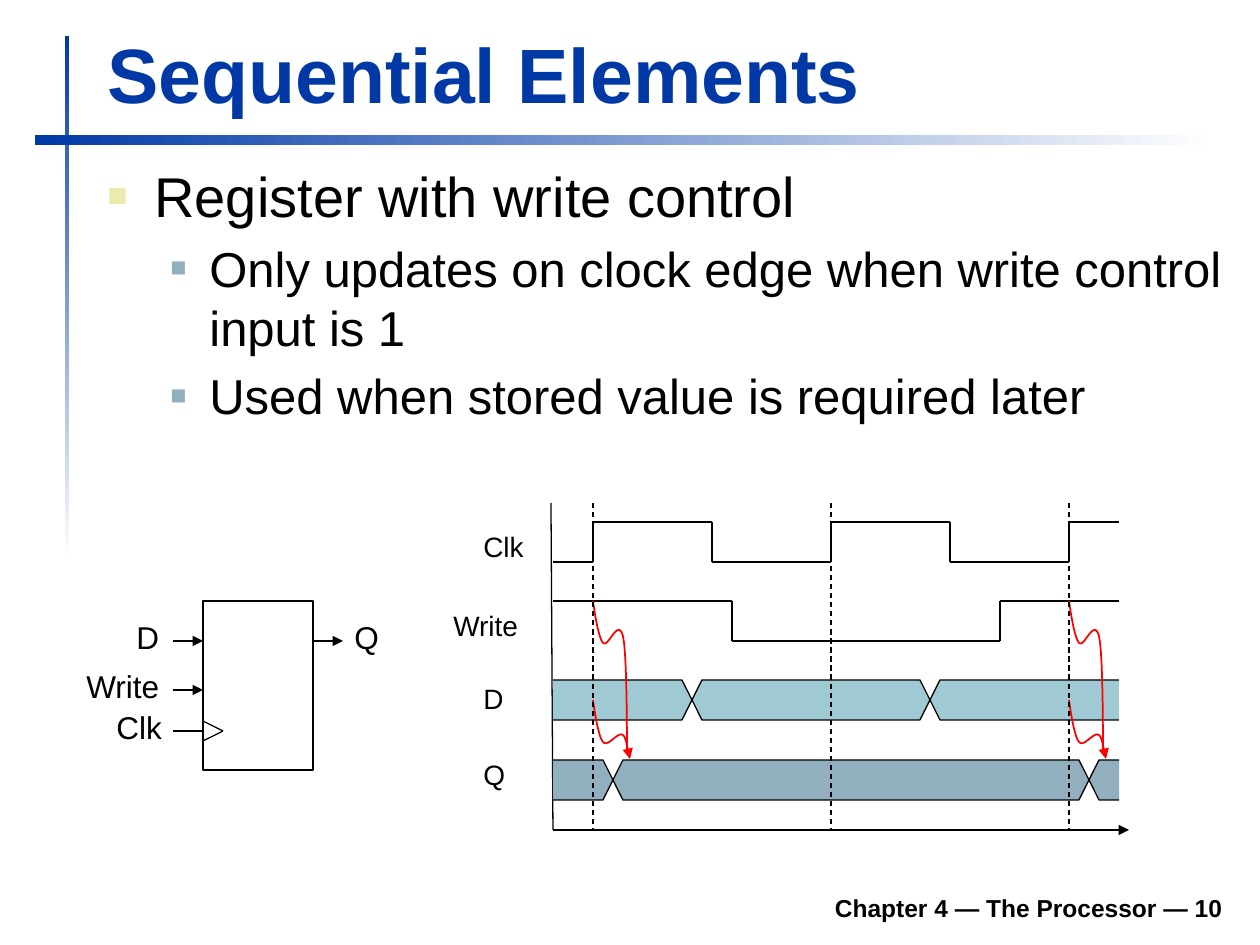
from itertools import pairwise

from lxml import etree
from pptx import Presentation
from pptx import util as u
from pptx.dml.color import RGBColor
from pptx.enum import dml, shapes, text
from pptx.oxml.ns import qn

PX = u.Inches(1) / 126
COLORS = {
    "blue": "0039A6", "white": "FFFFFF", "black": "000000", "red": "FF0000",
    "cream": "ECEAAC", "steel": "91AFBF", "aqua": "9FCAD3",
}
FONT = "Arial"


def px(value):
    return u.Emu(round(value * PX))


def rgb(name):
    return RGBColor.from_string(COLORS[name])


def style_line(item, color, width, arrow=False):
    item.line.color.rgb = rgb(color)
    item.line.width = u.Pt(width)
    if arrow:
        etree.SubElement(item.line._get_or_add_ln(), qn("a:tailEnd"), type="triangle")


def style_paragraph(paragraph, size, color="black", bold=False):
    for run in paragraph.runs:
        run.font.name = FONT
        run.font.size = u.Pt(size)
        run.font.bold = bold
        run.font.color.rgb = rgb(color)


def add_text(slide, box, words, size, color="black", bold=False, wrap=True):
    frame = slide.shapes.add_textbox(*map(px, box)).text_frame
    frame.word_wrap = wrap
    frame.text = words
    for paragraph in frame.paragraphs:
        style_paragraph(paragraph, size, color, bold)
    return frame


def add_label(slide, left, top, width, words, size):
    frame = add_text(slide, (left, top, width, 50 if size == 18 else 47),
                     words, size, wrap=False)
    frame.auto_size = text.MSO_AUTO_SIZE.SHAPE_TO_FIT_TEXT


def add_bullet(paragraph, size, color, percent, margin, indent):
    paragraph.space_before = u.Pt(size * 0.2)
    style_paragraph(paragraph, size)
    props = paragraph._p.get_or_add_pPr()
    props.set("marL", str(px(margin)))
    props.set("indent", str(px(-indent)))
    bullet_color = etree.SubElement(props, qn("a:buClr"))
    etree.SubElement(bullet_color, qn("a:srgbClr"), val=COLORS[color])
    etree.SubElement(props, qn("a:buSzPct"), val=str(percent * 1000))
    etree.SubElement(props, qn("a:buFont"), typeface=FONT)
    etree.SubElement(props, qn("a:buChar"), char="■")


def add_fade(slide, box, angle):
    bar = slide.shapes.add_shape(shapes.MSO_SHAPE.RECTANGLE, *map(px, box))
    bar.shadow.inherit = False
    bar.line.fill.background()
    bar.fill.gradient()
    bar.fill.gradient_angle = angle
    for stop, color in zip(bar.fill.gradient_stops, ("blue", "white")):
        stop.color.rgb = rgb(color)


def add_line(slide, start, end, width=0.75, arrow=False, dashed=False):
    line = slide.shapes.add_connector(shapes.MSO_CONNECTOR.STRAIGHT,
                                      *map(px, (*start, *end)))
    style_line(line, "black", width)
    if dashed:
        line.line.dash_style = dml.MSO_LINE.DASH
    if arrow:
        etree.SubElement(line.line._get_or_add_ln(), qn("a:tailEnd"), type="triangle")
    etree.SubElement(line._element.spPr, qn("a:effectLst"))


def add_outline(slide, points, fill=None, color="black", width=0.75,
                close=False, arrow=False):
    start, *rest = [(px(x), px(y)) for x, y in points]
    builder = slide.shapes.build_freeform(*start, scale=1.0)
    builder.add_line_segments(rest, close=close)
    outline = builder.convert_to_shape()
    outline.shadow.inherit = False
    if fill:
        outline.fill.solid()
        outline.fill.fore_color.rgb = rgb(fill)
    else:
        outline.fill.background()
    style_line(outline, color, width, arrow)


def add_signal(slide, points):
    for start, end in pairwise(points):
        add_line(slide, start, end, 1.5)


def add_bus(slide, left, right, top, changes, fill):
    """A data band whose values cross over at each change."""
    slant, middle, bottom = 10, top + 20, top + 40
    first, last = changes
    for edge, tip, side in ((left, first, -1), (right, last, 1)):
        neck = tip + side * slant
        add_outline(slide, [(edge, top), (neck, top), (tip, middle),
                            (neck, bottom), (edge, bottom)], fill)
    add_outline(slide, [(first, middle), (first + slant, top), (last - slant, top),
                        (last, middle), (last - slant, bottom),
                        (first + slant, bottom)], fill, close=True)


def add_curve(slide, x, y, controls, arrow=False, steps=10):
    """Chained cubic curves, with control points relative to (x, y)."""
    points = [(0, 0)]
    for i in range(0, len(controls), 3):
        knots = (points[-1], *controls[i:i + 3])
        for step in range(1, steps + 1):
            t = step / steps
            weights = ((1 - t) ** 3, 3 * t * (1 - t) ** 2, 3 * t * t * (1 - t), t ** 3)
            points.append(tuple(sum(w * k[axis] for w, k in zip(weights, knots))
                                for axis in (0, 1)))
    add_outline(slide, [(x + dx, y + dy) for dx, dy in points],
                color="red", width=1, arrow=arrow)


def add_headings(slide):
    add_fade(slide, (65, 36, 4, 525), 270)
    add_fade(slide, (35, 135, 1180, 10), 0)
    footer = add_text(slide, (233, 880, 1002, 49),
                      "Chapter 4 — The Processor — 10", 14, bold=True)
    footer.vertical_anchor = text.MSO_ANCHOR.BOTTOM
    footer.paragraphs[0].alignment = text.PP_ALIGN.RIGHT
    title = add_text(slide, (95, 20, 1138, 105), "Sequential Elements", 44, "blue", True)
    title.vertical_anchor = text.MSO_ANCHOR.BOTTOM

    body = add_text(slide, (95, 155, 1141, 318), "\n".join((
        "Register with write control",
        "Only updates on clock edge when write control input is 1",
        "Used when stored value is required later")), 28)
    topic, *details = body.paragraphs
    add_bullet(topic, 32, "cream", 60, 47, 47)
    for detail in details:
        detail.level = 1
        add_bullet(detail, 28, "steel", 55, 102, 39)


def add_register(slide):
    left, right, clk_y = 203, 313, 731
    register = slide.shapes.add_shape(shapes.MSO_SHAPE.RECTANGLE,
                                      *map(px, (left, 601, right - left, 169)))
    register.shadow.inherit = False
    register.fill.background()
    style_line(register, "black", 1.5)

    # Inputs and output
    for x, y in ((left, 641), (left, 690), (right + 30, 641)):
        add_line(slide, (x - 30, y), (x, y), 1, arrow=True)
    add_line(slide, (left - 30, clk_y), (left, clk_y))
    for y in (clk_y - 10, clk_y + 10):
        add_line(slide, (left, y), (left + 20, clk_y))
    for x, y, width, words in ((124, 612, 48, "D"), (74, 661, 98, "Write"),
                               (104, 702, 71, "Clk"), (342, 612, 51, "Q")):
        add_label(slide, x, y, width, words, 18)


def add_timing(slide):
    left, right, bottom, top = 553, 1119, 830, 503
    half = 119
    edges = [593 + half * i for i in range(5)]
    rising = edges[::2]

    # Axes and row names
    add_line(slide, (left, bottom), (right + 10, bottom), arrow=True)
    add_line(slide, (left, bottom), (left - 2, top))
    for x, y, width, words in ((471, 523, 66, "Clk"), (441, 602, 91, "Write"),
                               (471, 675, 45, "D"), (471, 751, 48, "Q")):
        add_label(slide, x, y, width, words, 16)

    # Clock and write signals
    high, low = 522, 562
    clock, level = [(left, low)], low
    for x in edges:
        clock.append((x, level))
        level = high if level == low else low
        clock.append((x, level))
    add_signal(slide, clock + [(right, level)])
    add_signal(slide, [(left, 601), (732, 601), (732, 641),
                       (1000, 641), (1000, 601), (right, 601)])

    # Data buses
    add_bus(slide, left, right, 680, (692, 930), "aqua")
    add_bus(slide, left, right, 760, (613, 1089), "steel")

    # Cause and effect at the edges where write is high
    dip = [(1, 7), (5, 36), (10, 42)]
    for x in (rising[0], rising[-1]):
        add_curve(slide, x, 700, dip + [(15, 48), (25, 31), (30, 35),
                                        (34, 38), (35, 54), (37, 59)], arrow=True)
        add_curve(slide, x, 601, dip + [(15, 48), (25, 16), (30, 35),
                                        (34, 53), (34, 127), (34, 151)])
    for x in rising:
        add_line(slide, (x, top), (x, bottom), dashed=True)


def main():
    deck = Presentation()
    deck.slide_width, deck.slide_height = px(1260), px(945)
    slide = deck.slides.add_slide(deck.slide_layouts[6])
    add_headings(slide)
    add_register(slide)
    add_timing(slide)
    deck.save("out.pptx")


if __name__ == "__main__":
    main()
